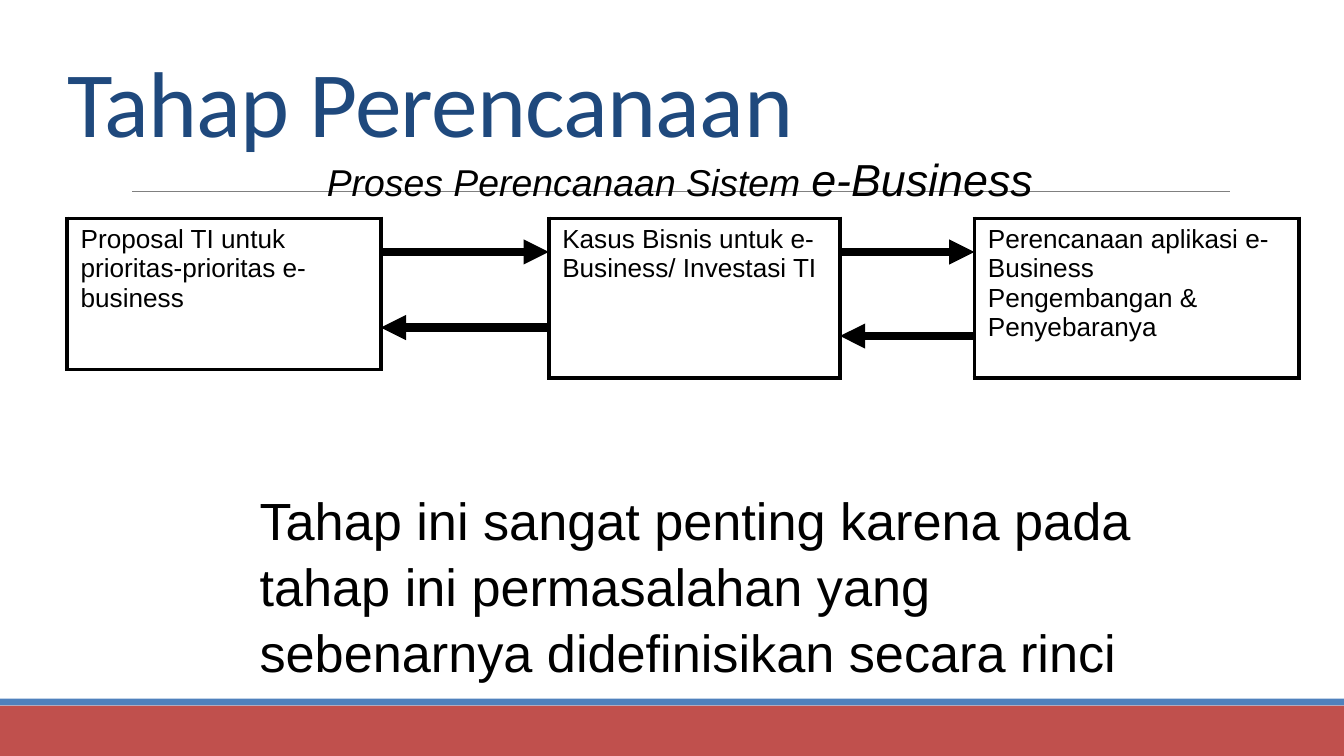
from dataclasses import dataclass

import pptx
import pptx.dml.color
import pptx.enum.shapes
import pptx.enum.text
import pptx.oxml
import pptx.oxml.ns
import pptx.util

Pt = pptx.util.Pt
Shape = pptx.enum.shapes.MSO_SHAPE
Anchor = pptx.enum.text.MSO_ANCHOR
Align = pptx.enum.text.PP_ALIGN
NS = pptx.oxml.ns.nsdecls("a")


@dataclass(frozen=True)
class Theme:
    """Colours, fonts and type sizes of the slide."""
    ink: str = "000000"
    title: str = "1F497D"
    rule: str = "808080"
    red: str = "C0504D"
    blue: str = "4F81BD"
    head: str = "Calibri"
    body: str = "Arial"
    big: float = 50
    lead: float = 28
    term: float = 24
    sub: float = 20
    cell: float = 14


THEME = Theme()


def color(code):
    """Return the colour for a hex code."""
    return pptx.dml.color.RGBColor.from_string(code)


def style(run, size, face=THEME.body, code=THEME.ink, slant=False):
    """Format one run."""
    font = run.font
    font.size, font.name, font.italic = Pt(size), face, slant
    font.color.rgb = color(code)


def inset(part, side, top, base):
    """Set the margins of a text frame or cell."""
    part.margin_left = part.margin_right = Pt(side)
    part.margin_top, part.margin_bottom = Pt(top), Pt(base)


def bar(slide, box, code):
    """Draw a plain filled band."""
    band = slide.shapes.add_shape(Shape.RECTANGLE, *map(Pt, box))
    band.shadow.inherit = False
    band.fill.solid()
    band.fill.fore_color.rgb = color(code)
    band.line.fill.background()


def line(slide, start, end, code, width, arrow=False):
    """Draw a straight line, with an arrowhead at its end if asked."""
    link = slide.shapes.add_connector(
        pptx.enum.shapes.MSO_CONNECTOR.STRAIGHT, *map(Pt, start + end))
    link.line.color.rgb = color(code)
    link.line.width = Pt(width)
    if arrow:
        link.line._get_or_add_ln().append(
            pptx.oxml.parse_xml(f'<a:tailEnd {NS} type="triangle"/>'))
    link._element.spPr.append(pptx.oxml.parse_xml(f"<a:effectLst {NS}/>"))


def frame(slide, box):
    """Draw the footer bands and the title rule within the page."""
    x, y, w, h = box
    bar(slide, (x, y + h - 27, w, 27), THEME.red)
    bar(slide, (x, y + h - 30.75, w, 3.75), THEME.blue)
    line(slide, (x + 70.75, y + 102.75), (x + 658.75, y + 102.75),
         THEME.rule, 0.5)


def head(slide, box, text):
    """Place and format the title."""
    title = slide.shapes.title
    title.left, title.top, title.width, title.height = map(Pt, box)
    body = title.text_frame
    body.text = text
    body.auto_size = pptx.enum.text.MSO_AUTO_SIZE.NONE
    body.vertical_anchor = Anchor.BOTTOM
    inset(body, 0, 3.6, 0)
    para = body.paragraphs[0]
    para.alignment, para.line_spacing = Align.LEFT, 0.85
    style(para.runs[0], THEME.big, THEME.head, THEME.title)
    para.runs[0].font._element.set("spc", "-40")


def note(slide, box, parts, slant=False, space=1.0):
    """Place one paragraph made of text and size pairs."""
    body = slide.shapes.add_textbox(*map(Pt, box)).text_frame
    body.word_wrap = True
    inset(body, 7.2, 3.6, 3.6)
    para = body.paragraphs[0]
    para.line_spacing = space
    for text, size in parts:
        run = para.add_run()
        run.text = text
        style(run, size, slant=slant)


def card(slide, box, text):
    """Place a bordered table of one cell."""
    table = slide.shapes.add_table(1, 1, *map(Pt, box)).table
    table.first_row = table.horz_banding = False
    cell = table.cell(0, 0)
    cell.text = text
    inset(cell, 7.2, 3.3, 3.3)
    style(cell.text_frame.paragraphs[0].runs[0], THEME.cell)
    props = cell._tc.get_or_add_tcPr()
    for side in ("lnL", "lnR", "lnT", "lnB"):
        props.append(pptx.oxml.parse_xml(
            f'<a:{side} {NS} w="{Pt(2.25)}"><a:solidFill>'
            f'<a:srgbClr val="{THEME.ink}"/></a:solidFill></a:{side}>'))
    cell.fill.background()


def flow(slide, box, cards, backs):
    """Lay out the cards and join each pair with arrows both ways."""
    x, y = box[:2]
    for left, wide, high, text in cards:
        card(slide, (x + left, y, wide, high), text)
    for one, two, back in zip(cards, cards[1:], backs):
        near, far = x + one[0] + one[1], x + two[0]
        line(slide, (near, y + 18), (far, y + 18), THEME.ink, 4.5, True)
        line(slide, (far, y + back), (near, y + back), THEME.ink, 4.5, True)


def main():
    """Build and save the slide."""
    deck = pptx.Presentation()
    deck.slide_width, deck.slide_height = Pt(720), Pt(405)
    slide = deck.slides.add_slide(deck.slide_layouts[5])
    frame(slide, (0, 0, 720, 405))
    head(slide, (36, 16.5, 648, 67.5), "Tahap Perencanaan")
    flow(slide, (36, 117, 660, 86), [
        (0, 168, 81, "Proposal TI untuk prioritas-prioritas e-business"),
        (258, 156, 85.5, "Kasus Bisnis untuk e-Business/ Investasi TI"),
        (486, 174, 85.5,
         "Perencanaan aplikasi e-Business Pengembangan & Penyebaranya"),
    ], (58.5, 63))
    note(slide, (168, 76.5, 432, 27),
         [("Proses Perencanaan Sistem ", THEME.sub),
          ("e-Business", THEME.term)], slant=True, space=1.05)
    note(slide, (132, 256.5, 492, 81),
         [("Tahap ini sangat penting karena pada tahap ini permasalahan "
           "yang sebenarnya didefinisikan secara rinci", THEME.lead)],
         space=1.05)
    deck.save("out.pptx")


if __name__ == "__main__":
    main()
